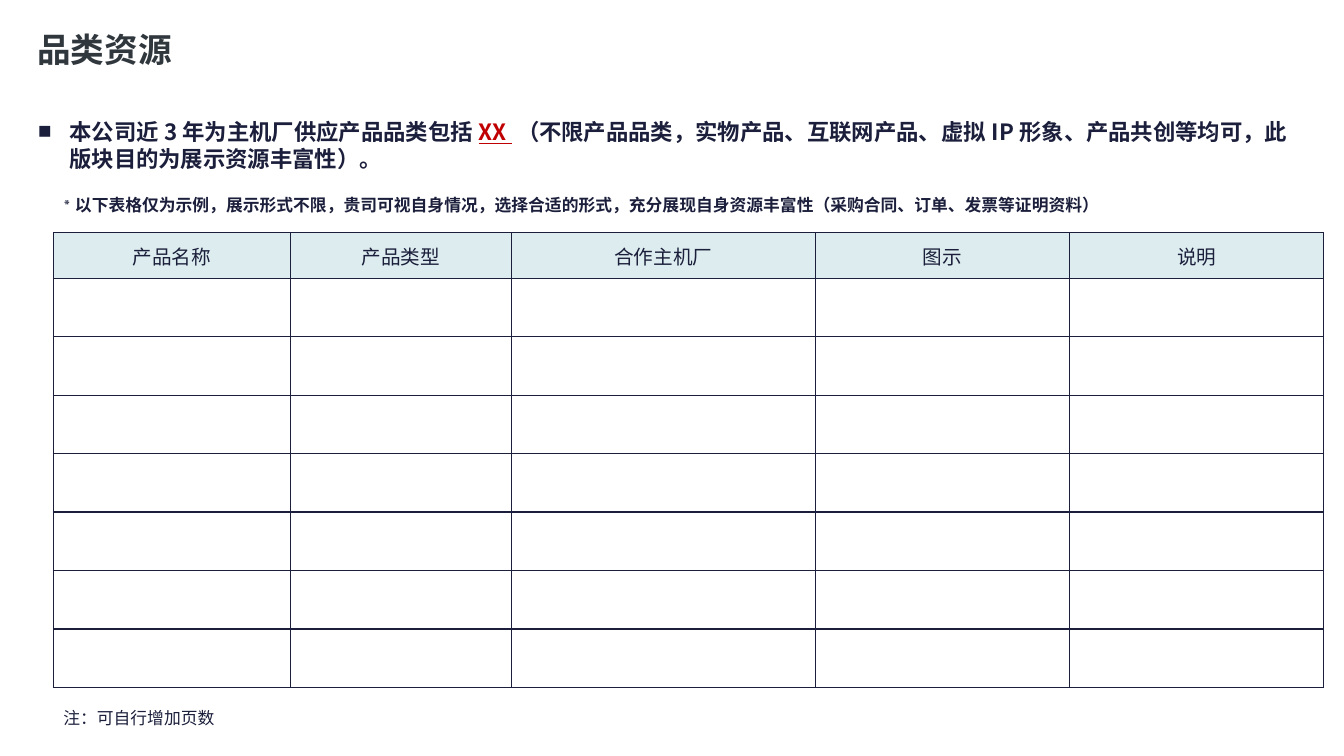
"""Build the product category resources slide."""
import pptx
import pptx.util
import pptx.dml.color
import pptx.enum.text
import pptx.oxml.ns
from lxml import etree

Inches = pptx.util.Inches
Pt = pptx.util.Pt
RGBColor = pptx.dml.color.RGBColor
Align = pptx.enum.text.PP_ALIGN
Anchor = pptx.enum.text.MSO_ANCHOR
qn = pptx.oxml.ns.qn

NAVY = RGBColor(0x1B, 0x1F, 0x3B)
SLATE = RGBColor(0x30, 0x38, 0x3E)
RED = RGBColor(0xC0, 0x00, 0x00)
PALE = RGBColor(0xDD, 0xED, 0xEF)
SANS = "Noto Sans CJK SC"

TITLE = "品类资源"
INTRO = [
    ("本公司近3年为主机厂供应产品品类包括", False),
    ("XX ", True),
    ("（不限产品品类，实物产品、互联网产品、虚拟IP形象、产品共创等均可，此版块目的为展示资源丰富性）。", False),
]
NOTES = [
    ("*以下表格仅为示例，展示形式不限，贵司可视自身情况，选择合适的形式，充分展现自身资源丰富性（采购合同、订单、发票等证明资料）",
     (0.53, 1.88, 12.31, 0.3), True),
    ("注：可自行增加页数", (0.53, 6.97, 2.87, 0.3), False),
]
COLUMNS = [("产品名称", 2.35), ("产品类型", 2.19), ("合作主机厂", 3.02), ("图示", 2.52), ("说明", 2.52)]
EMPTY_ROWS = 7
HEADER_HEIGHT, ROW_HEIGHT = 0.45, 0.58


def format_paragraph(para, name, size, color, bold=False):
    """Set the Latin and East Asian fonts of a paragraph."""
    font = para.font
    font.name, font.size, font.bold = name, Pt(size), bold
    font.color.rgb = color
    properties = para._p.pPr.find(qn("a:defRPr"))
    latin = properties.find(qn("a:latin"))
    east_asian = etree.Element(qn("a:ea"), typeface=SANS)
    latin.addnext(east_asian)


def add_text_box(page, place):
    """Add a wrapping text box and return its first paragraph."""
    box = page.shapes.add_textbox(*map(Inches, place))
    box.text_frame.word_wrap = True
    return box.text_frame.paragraphs[0]


def add_bullet(para, indent):
    """Give a paragraph a square bullet with a hanging indent."""
    properties = para._p.get_or_add_pPr()
    properties.set("marL", str(Inches(indent)))
    properties.set("indent", str(-Inches(indent)))
    etree.SubElement(properties, qn("a:buFont"), typeface="Arial")
    etree.SubElement(properties, qn("a:buChar"), char="■")


def add_borders(cell):
    """Draw a one-point navy line on each side of a cell."""
    properties = cell._tc.get_or_add_tcPr()
    for position, side in enumerate(("a:lnL", "a:lnR", "a:lnT", "a:lnB")):
        line = etree.Element(qn(side), w=str(Pt(1)))
        fill = etree.SubElement(line, qn("a:solidFill"))
        etree.SubElement(fill, qn("a:srgbClr"), val=str(NAVY))
        properties.insert(position, line)


def add_title(page):
    """Place and format the slide title."""
    title = page.shapes.title
    title.left, title.top, title.width, title.height = map(Inches, (0.27, 0.19, 5.22, 0.65))
    frame = title.text_frame
    frame.text = TITLE
    frame.auto_size = pptx.enum.text.MSO_AUTO_SIZE.NONE
    frame.vertical_anchor = Anchor.MIDDLE
    para = frame.paragraphs[0]
    para.alignment = Align.LEFT
    para.line_spacing = 0.9
    format_paragraph(para, SANS, 24, SLATE, True)


def add_intro(page):
    """Add the bulleted introduction with its highlighted blank."""
    para = add_text_box(page, (0.28, 1.12, 12.72, 0.64))
    add_bullet(para, 0.31)
    format_paragraph(para, SANS, 16, NAVY, True)
    for text, highlighted in INTRO:
        span = para.add_run()
        span.text = text
        if highlighted:
            span.font.color.rgb = RED
            span.font.underline = True


def add_product_table(page):
    """Add the product table with a header and empty rows."""
    width = sum(column_width for _, column_width in COLUMNS)
    height = HEADER_HEIGHT + EMPTY_ROWS * ROW_HEIGHT
    table = page.shapes.add_table(EMPTY_ROWS + 1, len(COLUMNS), Inches(0.53), Inches(2.31),
                                  Inches(width), Inches(height)).table
    table.first_row = table.horz_banding = False
    for index, row in enumerate(table.rows):
        row.height = Inches(ROW_HEIGHT if index else HEADER_HEIGHT)
    for index, (heading, column_width) in enumerate(COLUMNS):
        table.columns[index].width = Inches(column_width)
        cell = table.cell(0, index)
        cell.text = heading
        cell.vertical_anchor = Anchor.MIDDLE
        para = cell.text_frame.paragraphs[0]
        para.alignment = Align.CENTER
        format_paragraph(para, "Arial", 14, NAVY)
        cell.fill.solid()
        cell.fill.fore_color.rgb = PALE
        for row in range(1, EMPTY_ROWS + 1):
            table.cell(row, index).fill.background()
    for cell in table.iter_cells():
        add_borders(cell)


def main():
    """Create and save the deck."""
    deck = pptx.Presentation()
    deck.slide_width, deck.slide_height = Inches(13.33), Inches(7.5)
    page = deck.slides.add_slide(deck.slide_layouts[5])
    add_title(page)
    add_intro(page)
    add_product_table(page)
    for text, place, bold in NOTES:
        para = add_text_box(page, place)
        para.text = text
        format_paragraph(para, "Cambria", 12, NAVY, bold)
    deck.save("out.pptx")


if __name__ == "__main__":
    main()
